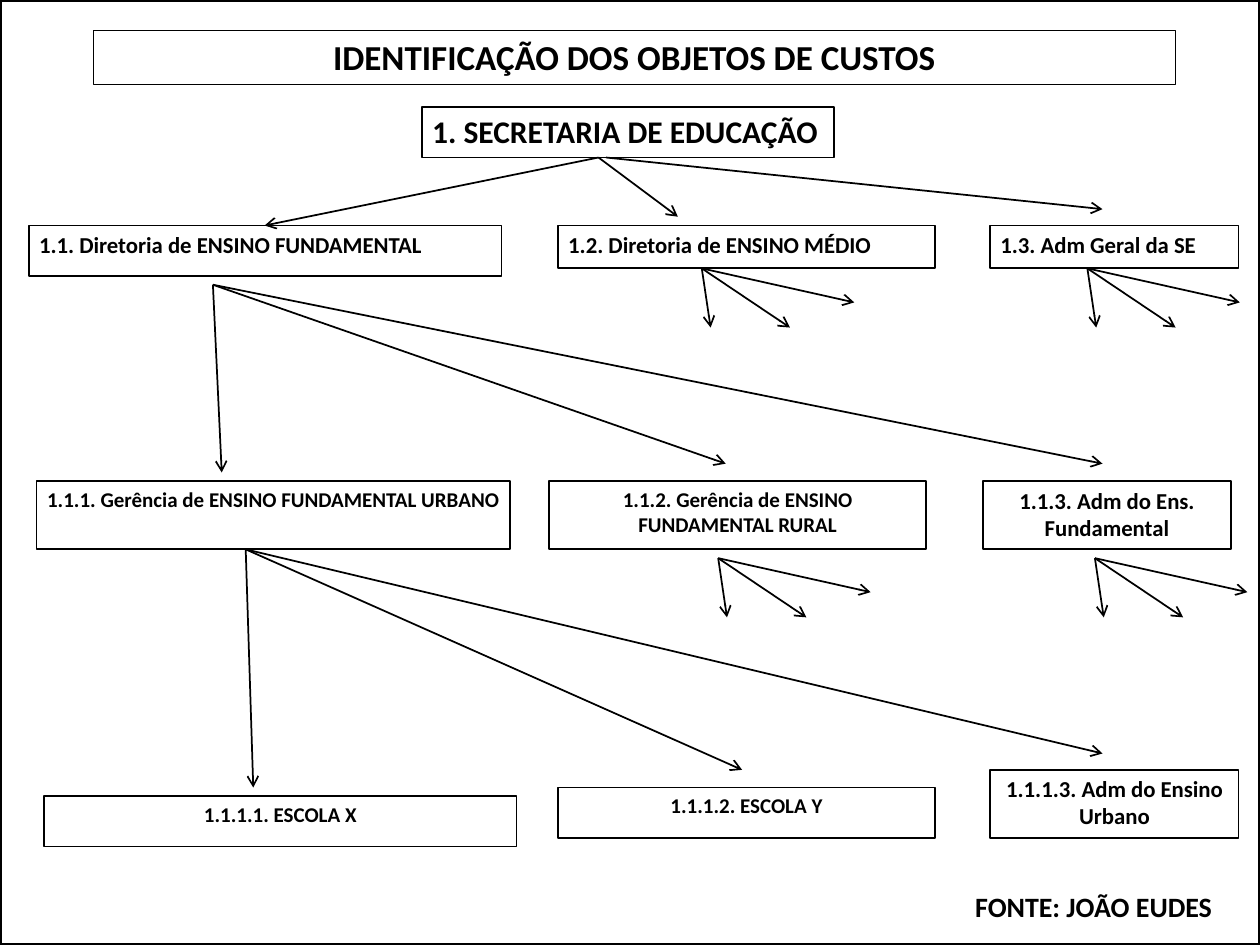
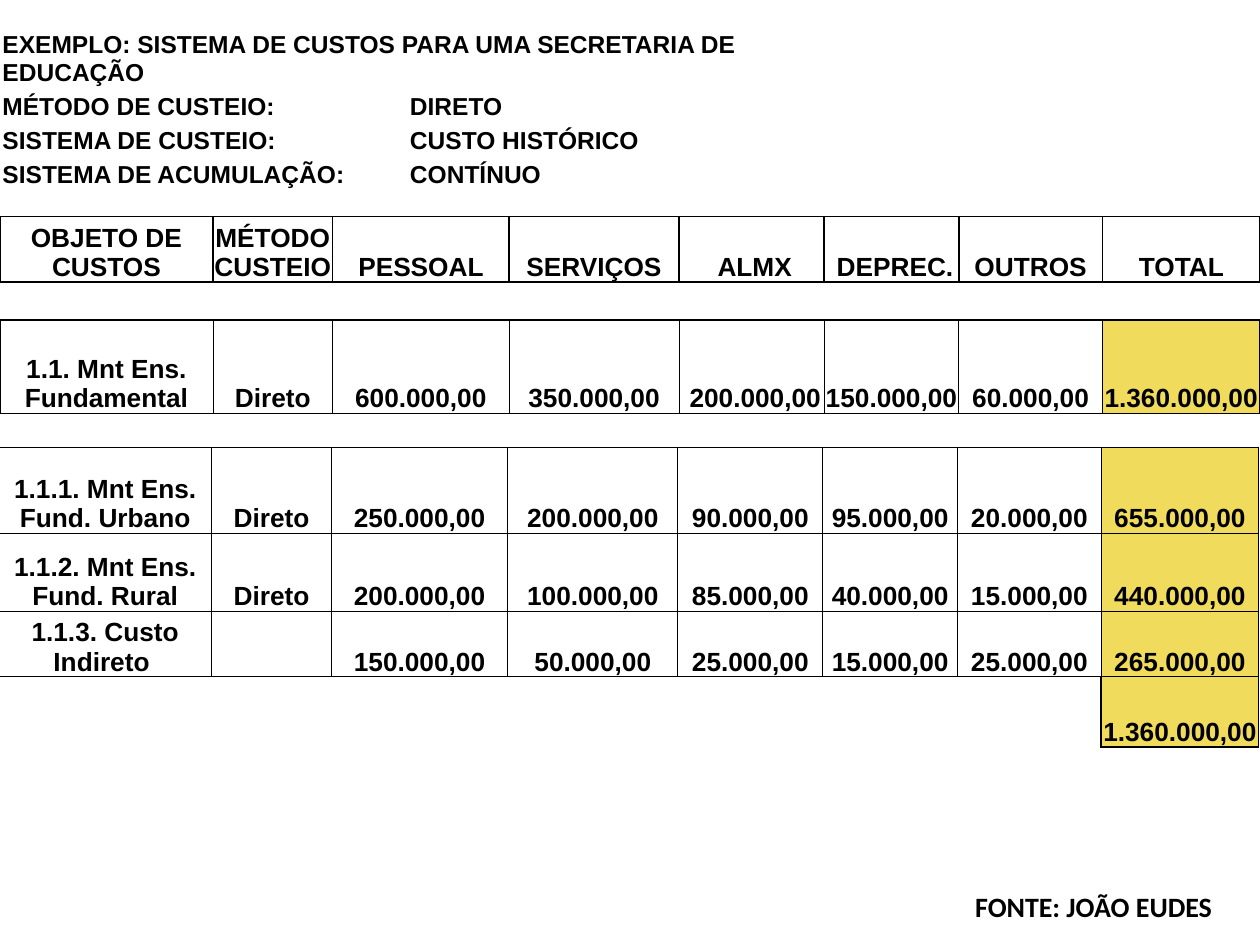
from dataclasses import dataclass

from lxml import etree
from pptx import Presentation
from pptx.dml.color import RGBColor
from pptx.enum.shapes import MSO_CONNECTOR as CONN, MSO_SHAPE as SHAPE
from pptx.enum.text import MSO_ANCHOR as ANCHOR, PP_ALIGN as ALIGN
from pptx.oxml.ns import qn
from pptx.util import Inches, Pt

COLORS = {"ink": "000000", "total": "F0DB5C"}
NO_STYLE = "{2D5ABB26-0587-4C30-8999-92F81FD0307C}"
BORDER_TAGS = {"L": "a:lnL", "R": "a:lnR", "T": "a:lnT", "B": "a:lnB"}


@dataclass
class Box:
    x: float
    y: float
    w: float
    h: float
    text: str
    size: int = 13
    align: ALIGN = ALIGN.CENTER


@dataclass
class Fan:
    """Arrows that leave one point for several ends."""
    x: float
    y: float
    ends: list[tuple[float, float]]


@dataclass
class Grid:
    x: float
    y: float
    cols: list[float]
    heights: list[float]
    rows: list[list[str]]
    size: int = 15
    align: ALIGN = ALIGN.CENTER
    inner: float = 0.5
    ruled: bool = True
    totals: bool = True


# Shared helpers
def rgb(name: str) -> RGBColor:
    return RGBColor.from_string(COLORS[name])


def style_text(tf, text: str, size: int, font: str, align: ALIGN) -> None:
    tf.text = text
    p = tf.paragraphs[0]
    p.alignment = align
    for r in p.runs:
        r.font.size, r.font.name, r.font.bold = Pt(size), font, True
        r.font.color.rgb = rgb("ink")


def place(sp, x: float, y: float, w: float, h: float) -> None:
    sp.left, sp.top, sp.width, sp.height = map(Inches, (x, y, w, h))


def outline(sp, width: float) -> None:
    sp.fill.background()
    sp.line.color.rgb = rgb("ink")
    sp.line.width = Pt(width)


def fill_box_text(tf, text: str, size: int, align: ALIGN) -> None:
    tf.word_wrap = True
    tf.vertical_anchor = ANCHOR.TOP
    tf.margin_left = tf.margin_right = Inches(0.08)
    tf.margin_top = tf.margin_bottom = Inches(0.04)
    style_text(tf, text, size, "Calibri", align)


def add_rect(s, x: float, y: float, w: float, h: float, width: float):
    sp = s.shapes.add_shape(SHAPE.RECTANGLE, *map(Inches, (x, y, w, h)))
    sp.shadow.inherit = False
    outline(sp, width)
    return sp


def add_box(s, box: Box) -> None:
    sp = add_rect(s, box.x, box.y, box.w, box.h, 1)
    fill_box_text(sp.text_frame, box.text, box.size, box.align)


def add_fan(s, fan: Fan) -> None:
    for end in fan.ends:
        cx = s.shapes.add_connector(
            CONN.STRAIGHT, *map(Inches, (fan.x, fan.y, *end)))
        cx.line.color.rgb = rgb("ink")
        cx.line.width = Pt(1)
        etree.SubElement(cx.line._get_or_add_ln(), qn("a:tailEnd"), type="arrow")
        etree.SubElement(cx._element.spPr, qn("a:effectLst"))


def add_source(s) -> None:
    tf = s.shapes.add_textbox(*map(Inches, (7.36, 6.95, 2.64, 0.48))).text_frame
    tf.word_wrap = True
    tf.vertical_anchor = ANCHOR.MIDDLE
    style_text(tf, "FONTE: JOÃO EUDES", 16, "Calibri", ALIGN.CENTER)


# Tables
def set_borders(cell, widths: dict[str, float]) -> None:
    tc_pr = cell._tc.get_or_add_tcPr()
    for side, tag in BORDER_TAGS.items():
        if side in widths:
            ln = etree.SubElement(tc_pr, qn(tag), w=str(Pt(widths[side])))
            fill = etree.SubElement(ln, qn("a:solidFill"))
            etree.SubElement(fill, qn("a:srgbClr"), val=COLORS["ink"])


def border_widths(grid: Grid, row: int, col: int) -> dict[str, float]:
    last = col == len(grid.cols) - 1
    if not grid.rows[row][0]:  # only the total closes a row without a name
        return dict.fromkeys("LRTB", 1) if last else {"T": 1}
    return {"L": grid.inner if col else 1, "R": 1 if last else grid.inner,
            "T": grid.inner if row else 1, "B": grid.inner}


def add_grid(s, grid: Grid):
    frame = s.shapes.add_table(
        len(grid.rows), len(grid.cols), Inches(grid.x), Inches(grid.y),
        Inches(sum(grid.cols)), Inches(sum(grid.heights)))
    tbl = frame.table
    tbl.first_row = tbl.horz_banding = False
    tbl._tbl.tblPr[0].text = NO_STYLE
    for column, width in zip(tbl.columns, grid.cols):
        column.width = Inches(width)
    for row, height in zip(tbl.rows, grid.heights):
        row.height = Inches(height)
    for i, texts in enumerate(grid.rows):
        for j, text in enumerate(texts):
            cell = tbl.cell(i, j)
            cell.margin_left = cell.margin_right = cell.margin_top = Inches(0.01)
            cell.margin_bottom = 0
            cell.vertical_anchor = ANCHOR.BOTTOM
            if grid.ruled:
                set_borders(cell, border_widths(grid, i, j))
            if grid.totals and j == len(texts) - 1:
                cell.fill.solid()
                cell.fill.fore_color.rgb = rgb("total")
            else:
                cell.fill.background()
            style_text(cell.text_frame, text, grid.size, "Arial", grid.align)
            if not text:  # keeps empty cells from stretching the row
                p = cell.text_frame.paragraphs[0]
                etree.SubElement(p._p, qn("a:endParaRPr"), sz=str(grid.size * 100))
    return tbl


def cost_row(name: str, method: str, *amounts: str) -> list[str]:
    return [name, method, *(f" {a} " if a else "" for a in amounts)]


# Slide 1: tree of cost objects
TREE = [
    Box(3.35, 0.85, 3.27, 0.4, "1. SECRETARIA DE EDUCAÇÃO", 18, ALIGN.LEFT),
    Box(0.23, 1.79, 3.75, 0.4, "1.1. Diretoria de ENSINO FUNDAMENTAL", align=ALIGN.LEFT),
    Box(4.43, 1.79, 2.99, 0.34, "1.2. Diretoria de ENSINO MÉDIO", align=ALIGN.LEFT),
    Box(7.86, 1.79, 1.97, 0.34, "1.3. Adm Geral da SE", align=ALIGN.LEFT),
    Box(0.29, 3.82, 3.76, 0.54, "1.1.1. Gerência de ENSINO FUNDAMENTAL URBANO", 12),
    Box(4.36, 3.82, 2.99, 0.54, "1.1.2. Gerência de ENSINO FUNDAMENTAL RURAL", 12),
    Box(7.8, 3.82, 1.97, 0.54, "1.1.3. Adm do Ens. Fundamental"),
    Box(0.35, 6.32, 3.75, 0.4, "1.1.1.1. ESCOLA X", 12),
    Box(4.43, 6.25, 2.99, 0.4, "1.1.1.2. ESCOLA Y", 12),
    Box(7.86, 6.11, 1.97, 0.54, "1.1.1.3. Adm do Ensino Urbano"),
]
BRANCHES = [
    Fan(4.75, 1.25, [(2.1, 1.79), (5.38, 1.72)]),
    Fan(4.81, 1.25, [(8.75, 1.66)]),
    Fan(1.69, 2.26, [(1.76, 3.75), (5.76, 3.68), (8.75, 3.68)]),
    Fan(1.95, 4.36, [(2.01, 6.25), (5.89, 6.11), (8.75, 5.98)]),
]
OPEN_BRANCHES = [(5.57, 2.13), (8.63, 2.13), (5.7, 4.43), (8.69, 4.43)]
OPEN_STEPS = [(0.07, 0.47), (0.7, 0.47), (1.21, 0.27)]


def build_tree(prs) -> None:
    s = prs.slides.add_slide(prs.slide_layouts[5])
    title = s.shapes.title
    place(title, 0.74, 0.24, 8.59, 0.43)
    outline(title, 0.75)
    fill_box_text(title.text_frame, "IDENTIFICAÇÃO DOS OBJETOS DE CUSTOS", 20, ALIGN.CENTER)
    for box in TREE:
        add_box(s, box)
    open_fans = [Fan(x, y, [(x + dx, y + dy) for dx, dy in OPEN_STEPS])
                 for x, y in OPEN_BRANCHES]
    for fan in BRANCHES + open_fans:
        add_fan(s, fan)
    add_rect(s, 0, 0, 10, 7.5, 2)
    add_source(s)


# Slide 2: cost tables
COST_COLS = [1.69, 0.95, 1.4, 1.35, 1.15, 1.07, 1.14, 1.25]
HEADER = Grid(0, 1.72, COST_COLS, [0.52], [
    ["OBJETO DE CUSTOS", "MÉTODO CUSTEIO", " PESSOAL ", " SERVIÇOS ",
     " ALMX", " DEPREC.", " OUTROS ", " TOTAL "],
], inner=1, totals=False)
SUMMARY = Grid(0, 2.54, COST_COLS, [0.74], [
    cost_row("1.1. Mnt Ens. Fundamental", "Direto", "600.000,00", "350.000,00",
             "200.000,00", "150.000,00", "60.000,00", "1.360.000,00"),
])
DETAIL = Grid(-0.01, 3.55, COST_COLS, [0.68, 0.62, 0.52, 0.56], [
    cost_row("1.1.1. Mnt Ens. Fund. Urbano", "Direto", "250.000,00", "200.000,00",
             "90.000,00", "95.000,00", "20.000,00", "655.000,00"),
    cost_row("1.1.2. Mnt Ens. Fund. Rural", "Direto", "200.000,00", "100.000,00",
             "85.000,00", "40.000,00", "15.000,00", "440.000,00"),
    cost_row("1.1.3. Custo Indireto ", "", "150.000,00", "50.000,00",
             "25.000,00", "15.000,00", "25.000,00", "265.000,00"),
    cost_row("", "", *[""] * 5, "1.360.000,00"),
])
EXAMPLE = Grid(0.01, 0.24, [3.18, 3.44, 0.06, 0.5], [0.27] * 4, [
    ["EXEMPLO: SISTEMA DE CUSTOS PARA UMA SECRETARIA DE EDUCAÇÃO", "", "", ""],
    ["MÉTODO DE CUSTEIO:", " DIRETO", "", ""],
    ["SISTEMA DE CUSTEIO:", " CUSTO HISTÓRICO", "", ""],
    ["SISTEMA DE ACUMULAÇÃO:", " CONTÍNUO", "", ""],
], size=14, align=ALIGN.LEFT, ruled=False, totals=False)


def build_costs(prs) -> None:
    s = prs.slides.add_slide(prs.slide_layouts[6])
    for grid in (SUMMARY, HEADER, DETAIL):
        add_grid(s, grid)
    example = add_grid(s, EXAMPLE)
    example.cell(0, 0).merge(example.cell(0, 1))
    example.cell(2, 2).merge(example.cell(2, 3))
    add_source(s)


def main() -> None:
    prs = Presentation()
    prs.slide_width, prs.slide_height = Inches(10), Inches(7.5)
    build_tree(prs)
    build_costs(prs)
    prs.save("out.pptx")


if __name__ == "__main__":
    main()
